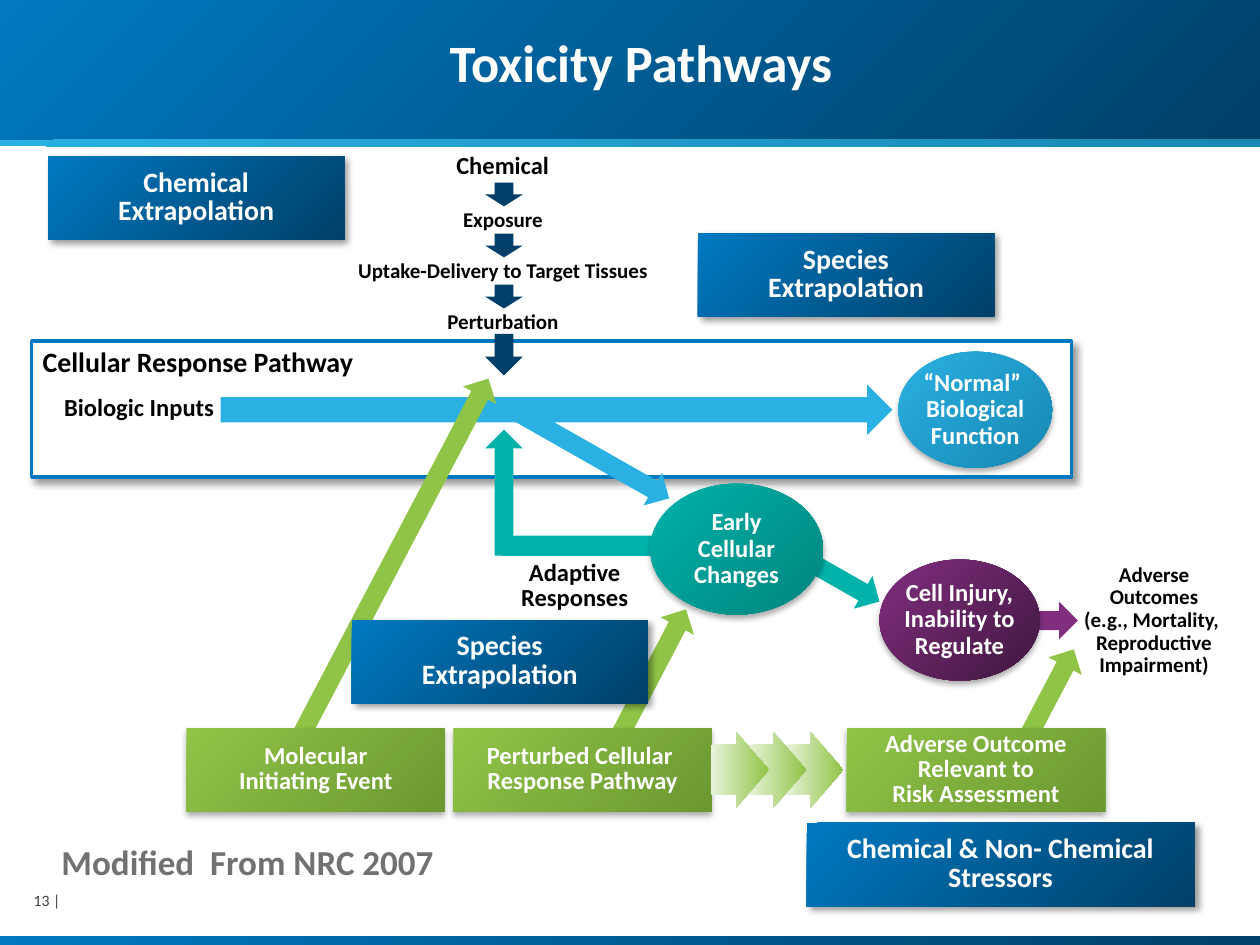
import pptx
import pptx.dml.color
import pptx.enum.shapes
import pptx.enum.text
import pptx.util
from dataclasses import dataclass
from lxml import etree
from pptx.util import Cm, Pt


@dataclass(frozen=True)
class Theme:
    font: str = "Calibri"
    white: str = "FFFFFF"
    black: str = "000000"
    gray: str = "717073"
    page_gray: str = "404040"
    blue: str = "0079C1"
    navy: str = "004068"
    sky: str = "2AB0E3"
    teal: str = "00B2A9"
    purple: str = "812E7F"
    green: str = "8FC447"
    navy_fade: tuple = ("0079C1", "004068")
    sky_fade: tuple = ("2AB0E3", "1788B2")
    teal_fade: tuple = ("00B2A9", "00857F")
    purple_fade: tuple = ("812E7F", "40173F")
    green_fade: tuple = ("8FC447", "6C9831")
    pale_fade: tuple = ("E9F3DA", "8FC447")
    title: int = 30
    source: int = 20
    heading: int = 16
    label: int = 14
    small: int = 12
    page: int = 9
    # Shadows: opacity %, blur pt, distance pt, direction in degrees
    deep_shadow: tuple = (40, 4, 3, 45)
    soft_shadow: tuple = (32, 3.5, 2.2, 90)


theme = Theme()
RGB = pptx.dml.color.RGBColor.from_string
KIND = pptx.enum.shapes.MSO_SHAPE
ALIGN = pptx.enum.text.PP_ALIGN
ANCHOR = pptx.enum.text.MSO_ANCHOR
DRAWING = "{http://schemas.openxmlformats.org/drawingml/2006/main}"

deck = pptx.Presentation()
deck.slide_width, deck.slide_height = Cm(25.4), Cm(19.05)
slide = deck.slides.add_slide(deck.slide_layouts[6])


def draw(kind, box, fill, rotation=0, shadow=None, angle=315):
    """Add a preset shape; box is in cm and a pair of colours makes a gradient."""
    shape = slide.shapes.add_shape(kind, *map(Cm, box))
    shape.rotation = rotation
    shape.line.fill.background()
    if isinstance(fill, tuple):
        shape.fill.gradient()
        shape.fill.gradient_angle = angle
        for stop, color in zip(shape.fill.gradient_stops, fill):
            stop.color.rgb = RGB(color)
        shape.fill.gradient_stops[0].position = 0
        shape.fill.gradient_stops[1].position = 1
    else:
        shape.fill.solid()
        shape.fill.fore_color.rgb = RGB(fill)
    shape.shadow.inherit = False
    if shadow:
        opacity, blur, distance, direction = shadow
        effects = shape.element.spPr.find(DRAWING + "effectLst")
        outer = etree.SubElement(effects, DRAWING + "outerShdw", blurRad=str(Pt(blur)),
                                 dist=str(Pt(distance)), dir=str(direction * 60000),
                                 rotWithShape="0")
        color = etree.SubElement(outer, DRAWING + "srgbClr", val=theme.black)
        etree.SubElement(color, DRAWING + "alpha", val=str(opacity * 1000))
    return shape


def write(target, text, size, color=theme.white, spacing=0.9, align=ALIGN.CENTER,
          anchor=ANCHOR.MIDDLE, side=0.25, edge=0.13, wrap=True):
    """Write bold text into a shape, or into a new text box when given a box in cm."""
    if isinstance(target, tuple):
        target = slide.shapes.add_textbox(*map(Cm, target))
    frame = target.text_frame
    frame.word_wrap = wrap
    frame.vertical_anchor = anchor
    frame.margin_left = frame.margin_right = Cm(side)
    frame.margin_top = frame.margin_bottom = Cm(edge)
    frame.text = text
    for paragraph in frame.paragraphs:
        paragraph.alignment = align
        paragraph.line_spacing = spacing
        for run in paragraph.runs:
            run.font.name = theme.font
            run.font.size = Pt(size)
            run.font.bold = True
            run.font.color.rgb = RGB(color)
    return target


# Header, footer and title
draw(KIND.RECTANGLE, (0, 0, 25.4, 2.87), theme.navy_fade)
draw(KIND.RECTANGLE, (0, 2.82, 25.4, 0.13), theme.sky_fade)
draw(KIND.RECTANGLE, (0, 18.87, 25.4, 0.18), theme.navy_fade)
page = write((0.33, 17.98, 0.89, 0.36), "13 |", theme.page, theme.page_gray,
             align=ALIGN.RIGHT, anchor=ANCHOR.BOTTOM, side=0, edge=0)
page.text_frame.paragraphs[0].runs[0].font.bold = False
write((0.99, 16.92, 23.47, 1.02), "Modified  From NRC 2007", theme.source, theme.gray,
      align=ALIGN.LEFT, anchor=ANCHOR.TOP)
write((1.19, 0, 23.47, 2.03), "Toxicity Pathways", theme.title, anchor=ANCHOR.BOTTOM)

# Cellular response pathway
pathway = draw(KIND.RECTANGLE, (0.64, 6.88, 20.96, 2.74), theme.white,
               shadow=theme.deep_shadow)
pathway.line.color.rgb = RGB(theme.blue)
pathway.line.width = Pt(2)
write((0.46, 7.85, 4.11, 0.79), "Biologic Inputs", theme.label, theme.black,
      align=ALIGN.RIGHT)
write((0.61, 6.81, 8.05, 0.94), "Cellular Response Pathway", theme.heading, theme.black,
      spacing=1, align=ALIGN.LEFT)

# Arrows between the cell states
draw(KIND.DOWN_ARROW, (15.85, 9.55, 0.76, 3.45), theme.teal, 299.6)
draw(KIND.DOWN_ARROW, (20.4, 11.56, 0.76, 1.9), theme.purple, 270)
draw(KIND.DOWN_ARROW, (9.78, 8.66, 0.76, 2.54), theme.teal, 180)
draw(KIND.RECTANGLE, (10.13, 10.8, 3.58, 0.41), theme.teal)
draw(KIND.RIGHT_ARROW, (4.45, 7.75, 13.54, 1.02), theme.sky)
draw(KIND.DOWN_ARROW, (11.61, 7.47, 0.76, 3.45), theme.sky, 299.6)

# Cell states and their outcomes
for box, fade, state in (
    ((18.11, 7.09, 3.1, 2.34), theme.sky_fade, "“Normal” \nBiological\nFunction"),
    ((17.73, 11.28, 3.23, 2.44), theme.purple_fade, "Cell Injury, Inability to Regulate"),
    ((13.11, 9.75, 3.48, 2.64), theme.teal_fade, "Early Cellular\nChanges"),
):
    write(draw(KIND.OVAL, box, fade, shadow=theme.soft_shadow), state, theme.label, side=0)
write((10.24, 11.18, 2.69, 1.27), "Adaptive\nResponses", theme.label, theme.black,
      spacing=0.85, wrap=False)
write((21.59, 11.23, 3.35, 2.57),
      "Adverse\nOutcomes\n(e.g., Mortality, \nReproductive\nImpairment)",
      theme.small, theme.black, wrap=False)

# Steps from chemical to perturbation, each followed by an arrow
write((8.46, 2.9, 3.35, 0.86), "Chemical", theme.label, theme.black, spacing=1)
exposure_steps = ("Exposure", "Uptake-Delivery to Target Tissues", "Perturbation")
for row, step in enumerate(exposure_steps):
    write((5.68, 4.04 + 1.03 * row, 8.92, 0.76), step, theme.small, theme.black, spacing=1)
    draw(KIND.DOWN_ARROW, (9.78, 3.68 + 1.03 * row, 0.76, 0.48), theme.navy)
draw(KIND.DOWN_ARROW, (9.78, 6.73, 0.76, 0.84), theme.navy)

# Outcome events, each pointing up to its place in the pathway
for left, arrow, event in (
    (9.14, (12.67, 12.09, 0.76, 3.35), "Perturbed Cellular \nResponse Pathway"),
    (3.76, (7.47, 7.14, 0.76, 8.59), "Molecular\nInitiating Event"),
    (17.07, (20.7, 12.95, 0.76, 2.44), "Adverse Outcome\nRelevant to\nRisk Assessment"),
):
    draw(KIND.DOWN_ARROW, arrow, theme.green, 207.7)
    event_box = draw(KIND.RECTANGLE, (left, 14.68, 5.21, 1.68), theme.green_fade,
                     shadow=theme.soft_shadow)
    write(event_box, event, theme.label, spacing=0.85, side=0)
for position in (2, 1, 0):
    chevron = draw(KIND.RIGHT_ARROW, (14.33 + 0.75 * position, 14.76, 1.17, 1.52),
                   theme.pale_fade, angle=0)
    chevron.adjustments[0], chevron.adjustments[1] = 0.66, 0.56

# Extrapolation needs
for left, top, width, need in (
    (0.97, 3.15, 5.97, "Chemical\vExtrapolation"),
    (16.26, 16.59, 7.82, "Chemical & Non- Chemical Stressors"),
    (7.09, 12.5, 5.97, "Species\vExtrapolation"),
    (14.07, 4.7, 5.97, "Species\vExtrapolation"),
):
    need_box = draw(KIND.RECTANGLE, (left, top, width, 1.68), theme.navy_fade,
                    shadow=theme.deep_shadow)
    write(need_box, need, theme.heading, spacing=0.85)

deck.save("out.pptx")
